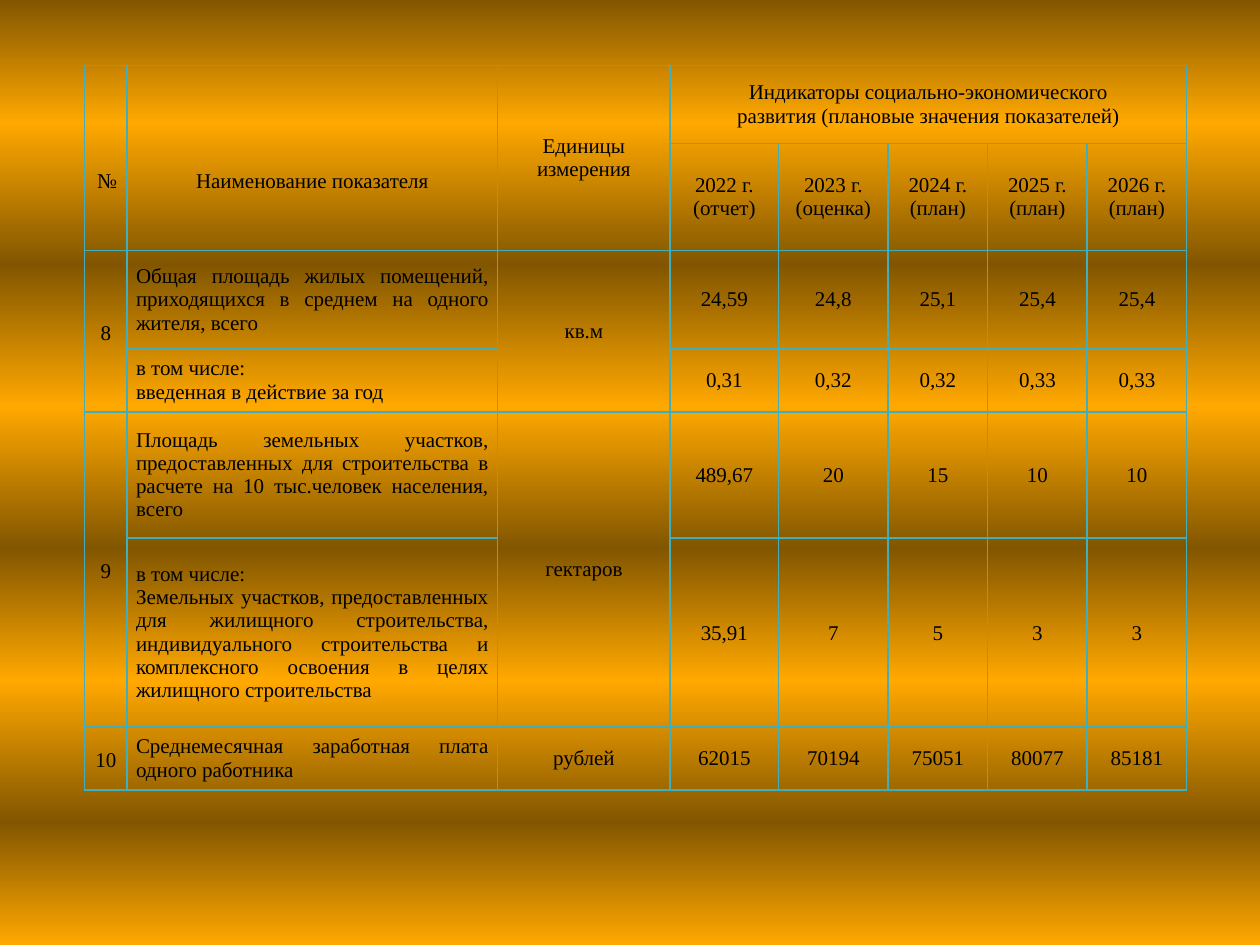
from lxml import etree
from pptx import Presentation
from pptx import util as u
from pptx.dml.color import RGBColor
from pptx.enum import text
from pptx.oxml import parse_xml
from pptx.oxml.ns import nsdecls, qn

BLACK = RGBColor(0x00, 0x00, 0x00)
TEAL = RGBColor(0x41, 0xAE, 0xBD)
BROWN = RGBColor(0x82, 0x56, 0x00)
AMBER = RGBColor(0xFF, 0xA8, 0x00)

CENTER = text.PP_ALIGN.CENTER
JUSTIFY = text.PP_ALIGN.JUSTIFY

GRID_COLS, GRID_ROWS = 100, 75
HEADER_INSETS = (0.1, 0.05, 0.1, 0.05)
LOW_HEADER_INSETS = (0.1, 0.42, 0.1, 0.05)
BODY_INSETS = (0.07, 0, 0.07, 0)
TIGHT_INSETS = (0.01, 0.01, 0.01, 0)

COLUMNS = [3.4, 29.4, 13.7, 8.6, 8.7, 7.9, 7.9, 7.9]
ROWS = [6.2, 8.5, 7.8, 5, 10, 15, 5]
GRADIENT_STOPS = [0, 13, 28, 43, 58, 72, 87, 100]

HEADINGS = [
    ("№", LOW_HEADER_INSETS, (2, 1)),
    ("Наименование показателя", LOW_HEADER_INSETS, (2, 1)),
    ("Единицы\nизмерения", HEADER_INSETS, (2, 1)),
    ("Индикаторы социально-экономического\n"
     "развития (плановые значения показателей)", HEADER_INSETS, (1, 5)),
]
YEARS = ["2022 г. (отчет)", "2023 г. (оценка)", "2024 г. (план)",
         "2025 г. (план)", "2026 г. (план)"]
INDICATORS = [
    ("8", "кв.м", BODY_INSETS, [
        ("Общая площадь жилых помещений, приходящихся в среднем на одного жителя, всего",
         ["24,59", "24,8", "25,1", "25,4", "25,4"]),
        ("в том числе:\nвведенная в действие за год",
         ["0,31", "0,32", "0,32", "0,33", "0,33"]),
    ]),
    ("9", "гектаров", TIGHT_INSETS, [
        ("Площадь земельных участков, предоставленных для строительства "
         "в расчете на 10 тыс.человек населения, всего",
         ["489,67", "20", "15", "10", "10"]),
        ("в том числе:\nЗемельных участков, предоставленных для жилищного строительства, "
         "индивидуального строительства и комплексного освоения в целях "
         "жилищного строительства",
         ["35,91", "7", "5", "3", "3"]),
    ]),
    ("10", "рублей", BODY_INSETS, [
        ("Среднемесячная заработная плата одного работника",
         ["62015", "70194", "75051", "80077", "85181"]),
    ]),
]


def write_text(tf, content, font="Times New Roman", size=12, color=BLACK,
               align=CENTER, spacing=None):
    for i, line in enumerate(content.split("\n")):
        p = tf.paragraphs[0] if i == 0 else tf.add_paragraph()
        p.alignment = align
        p.line_spacing = spacing
        r = p.add_run()
        r.text = line
        r.font.name = font
        r.font.size = u.Pt(size)
        r.font.color.rgb = color


class Deck:
    def __init__(self, width, height):
        self.prs = Presentation()
        self.prs.slide_width = u.Inches(width)
        self.prs.slide_height = u.Inches(height)
        self.slide = self.prs.slides.add_slide(self.prs.slide_layouts[6])

    def x(self, cols):
        return int(self.prs.slide_width * cols / GRID_COLS)

    def y(self, rows):
        return int(self.prs.slide_height * rows / GRID_ROWS)

    def background(self, stops, colors):
        self.slide.background.fill.solid()
        bg = self.slide.background.fill._xPr
        bg.remove(bg.find(qn("a:solidFill")))
        marks = "".join(
            f'<a:gs pos="{stop * 1000}"><a:srgbClr val="{colors[i % len(colors)]}"/></a:gs>'
            for i, stop in enumerate(stops))
        bg.insert(0, parse_xml(
            f'<a:gradFill {nsdecls("a")} rotWithShape="1"><a:gsLst>{marks}</a:gsLst>'
            '<a:lin ang="5400000" scaled="0"/></a:gradFill>'))

    def table(self, left, top, cols, rows):
        frame = self.slide.shapes.add_table(
            len(rows), len(cols), self.x(left), self.y(top),
            self.x(sum(cols)), self.y(sum(rows)))
        tbl = frame.table
        tbl.first_row = tbl.horz_banding = False
        for column, width in zip(tbl.columns, cols):
            column.width = self.x(width)
        for row, height in zip(tbl.rows, rows):
            row.height = self.y(height)
        for cell in tbl.iter_cells():
            self.borders(cell)
            cell.fill.background()
        return tbl

    def borders(self, cell):
        tc_pr = cell._tc.get_or_add_tcPr()
        for side in ("a:lnL", "a:lnR", "a:lnT", "a:lnB"):
            ln = etree.SubElement(tc_pr, qn(side), w=str(u.Pt(1)))
            fill = etree.SubElement(ln, qn("a:solidFill"))
            etree.SubElement(fill, qn("a:srgbClr"), val=str(TEAL))

    def cell(self, tbl, row, col, content, insets=BODY_INSETS, span=(1, 1), **fmt):
        cell = tbl.cell(row, col)
        if span != (1, 1):
            cell.merge(tbl.cell(row + span[0] - 1, col + span[1] - 1))
        (cell.margin_left, cell.margin_top,
         cell.margin_right, cell.margin_bottom) = map(u.Inches, insets)
        cell.vertical_anchor = text.MSO_ANCHOR.MIDDLE
        write_text(cell.text_frame, content, **fmt)


def main():
    deck = Deck(10, 7.5)
    deck.background(GRADIENT_STOPS, [BROWN, AMBER])
    tbl = deck.table(6.7, 5.2, COLUMNS, ROWS)

    for col, (heading, insets, span) in enumerate(HEADINGS):
        deck.cell(tbl, 0, col, heading, insets, span)
    for col, year in enumerate(YEARS, 3):
        deck.cell(tbl, 1, col, year, HEADER_INSETS)

    row = 2
    for number, unit, insets, lines in INDICATORS:
        span = (len(lines), 1)
        deck.cell(tbl, row, 0, number, span=span, spacing=1.15)
        deck.cell(tbl, row, 2, unit, span=span)
        for name, values in lines:
            deck.cell(tbl, row, 1, name, align=JUSTIFY)
            for col, value in enumerate(values, 3):
                deck.cell(tbl, row, col, value, insets)
            row += 1

    deck.prs.save("out.pptx")


if __name__ == "__main__":
    main()
